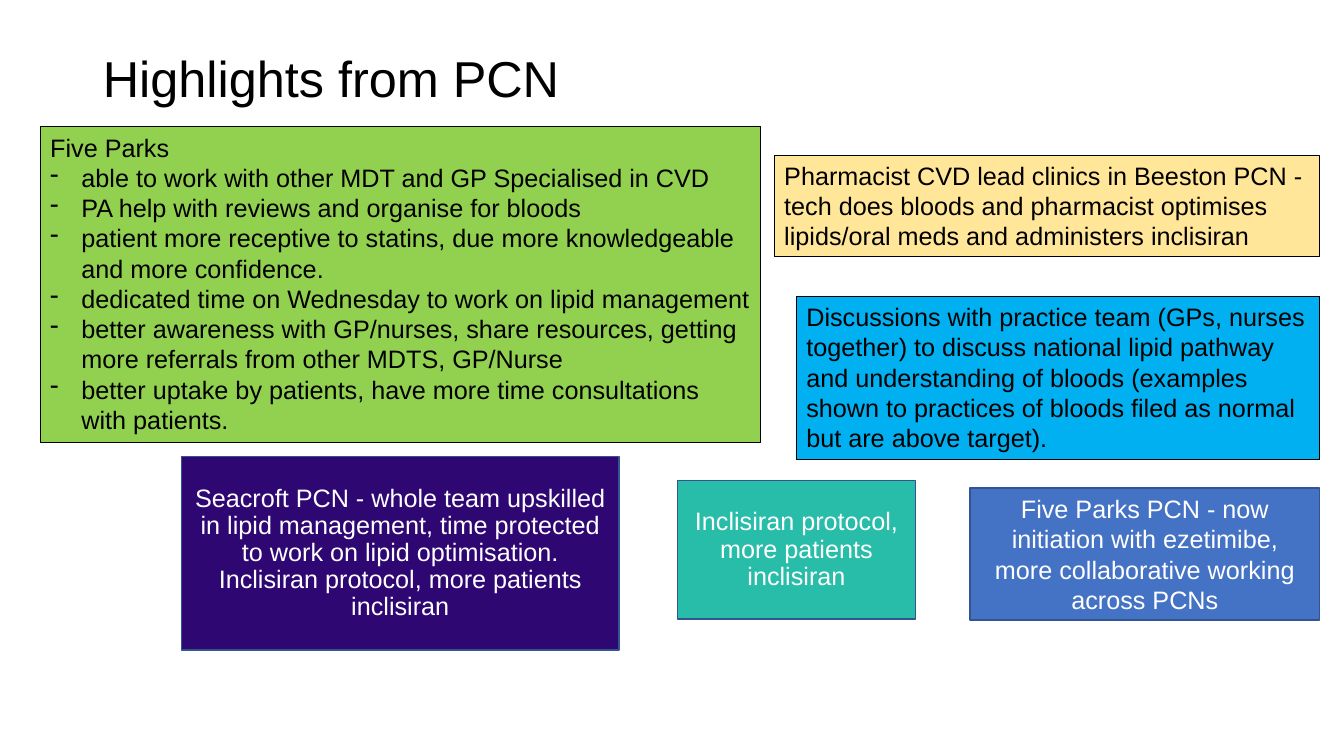
from dataclasses import dataclass
from lxml import etree
from pptx import Presentation, util as u
from pptx.dml.color import RGBColor
from pptx.enum import shapes, text
from pptx.oxml.ns import qn

WIDE, HIGH = u.Inches(13.33), u.Inches(7.5)
DENT = u.Inches(0.31)
INK, WHITE, NAVY = "000000", "FFFFFF", "325491"


@dataclass
class Area:
    left: float
    top: float
    width: float
    height: float


@dataclass
class Card:
    area: Area
    fill: str
    words: str
    solid: bool = False
    space: float = 1.0
    body: bool = False


CARDS = [
    Card(Area(72.17, 64.53, 26.03, 17.47), "4472C4",
         "Five Parks PCN - now initiation with ezetimibe, more "
         "collaborative working across PCNs", solid=True),
    Card(Area(13.5, 60.4, 32.56, 25.6), "2E0773",
         "Seacroft PCN - whole team upskilled in lipid management, time "
         "protected to work on lipid optimisation. Inclisiran protocol, "
         "more patients inclisiran", solid=True, space=0.9, body=True),
    Card(Area(50.41, 63.6, 17.7, 18.27), "28BDA9",
         "Inclisiran protocol, more patients inclisiran",
         solid=True, space=0.9),
    Card(Area(59.26, 39.2, 38.94, 21.6), "00B0F0",
         "Discussions with practice team (GPs, nurses together) to discuss "
         "national lipid pathway and understanding of bloods (examples shown "
         "to practices of bloods filed as normal but are above target)."),
    Card(Area(57.61, 20.53, 40.59, 13.47), "FFE699",
         "Pharmacist CVD lead clinics in Beeston PCN - tech does bloods and "
         "pharmacist optimises lipids/oral meds and administers inclisiran"),
    Card(Area(3, 16.8, 53.56, 41.73), "92D050", "\n".join([
        "Five Parks",
        "able to work with other MDT and GP Specialised in CVD",
        "PA help with reviews and organise for bloods",
        "patient more receptive to statins, due more knowledgeable "
        "and more confidence.",
        "dedicated time on Wednesday to work on lipid management",
        "better awareness with GP/nurses, share resources, getting more "
        "referrals from other MDTS, GP/Nurse",
        "better uptake by patients, have more time consultations "
        "with patients."])),
]


def tint(code: str) -> RGBColor:
    return RGBColor.from_string(code)


def scale(area: Area) -> list[int]:
    return [round(part * side / 100) for part, side in (
        (area.left, WIDE), (area.top, HIGH),
        (area.width, WIDE), (area.height, HIGH))]


def place(shape, area: Area) -> None:
    shape.left, shape.top, shape.width, shape.height = scale(area)


def bullet(para, mark: str) -> None:
    props = para._p.get_or_add_pPr()
    dent = DENT if mark else 0
    props.set("marL", str(dent))
    props.set("indent", str(-dent))
    if mark:
        etree.SubElement(props, qn("a:buFontTx"))
        etree.SubElement(props, qn("a:buChar"), char=mark)
    else:
        etree.SubElement(props, qn("a:buNone"))


def style(para, size: int, code: str, side, space: float) -> None:
    para.alignment = side
    para.line_spacing = space
    para.space_before = u.Pt(0)
    for run in para.runs:
        run.font.name = "Arial"
        run.font.size = u.Pt(size)
        run.font.color.rgb = tint(code)


def draw(slide, card: Card) -> None:
    if card.body:
        shape = slide.placeholders[1]
        place(shape, card.area)
    else:
        shape = slide.shapes.add_shape(
            shapes.MSO_SHAPE.RECTANGLE, *scale(card.area))
        shape.shadow.inherit = False
    shape.fill.solid()
    shape.fill.fore_color.rgb = tint(card.fill)
    shape.line.color.rgb = tint(NAVY if card.solid else INK)
    shape.line.width = u.Pt(1 if card.solid else 0.75)

    frame = shape.text_frame
    frame.text = card.words
    frame.word_wrap = True
    if card.solid:
        frame.auto_size = text.MSO_AUTO_SIZE.NONE
        frame.vertical_anchor = text.MSO_ANCHOR.MIDDLE
        side, code = text.PP_ALIGN.CENTER, WHITE
    else:
        frame.auto_size = text.MSO_AUTO_SIZE.SHAPE_TO_FIT_TEXT
        frame.vertical_anchor = text.MSO_ANCHOR.TOP
        side, code = text.PP_ALIGN.LEFT, INK
    for row, para in enumerate(frame.paragraphs):
        bullet(para, "-" if row else "")
        style(para, 18, code, side, card.space)


def head(slide) -> None:
    title = slide.shapes.title
    place(title, Area(6.9, 6, 74.04, 9.47))
    frame = title.text_frame
    frame.text = "Highlights from PCN"
    frame.auto_size = text.MSO_AUTO_SIZE.NONE
    frame.vertical_anchor = text.MSO_ANCHOR.MIDDLE
    style(frame.paragraphs[0], 36, INK, text.PP_ALIGN.LEFT, 0.9)


def main() -> None:
    deck = Presentation()
    deck.slide_width, deck.slide_height = WIDE, HIGH
    slide = deck.slides.add_slide(deck.slide_layouts[1])
    head(slide)
    for card in CARDS:
        draw(slide, card)
    deck.save("out.pptx")


if __name__ == "__main__":
    main()
